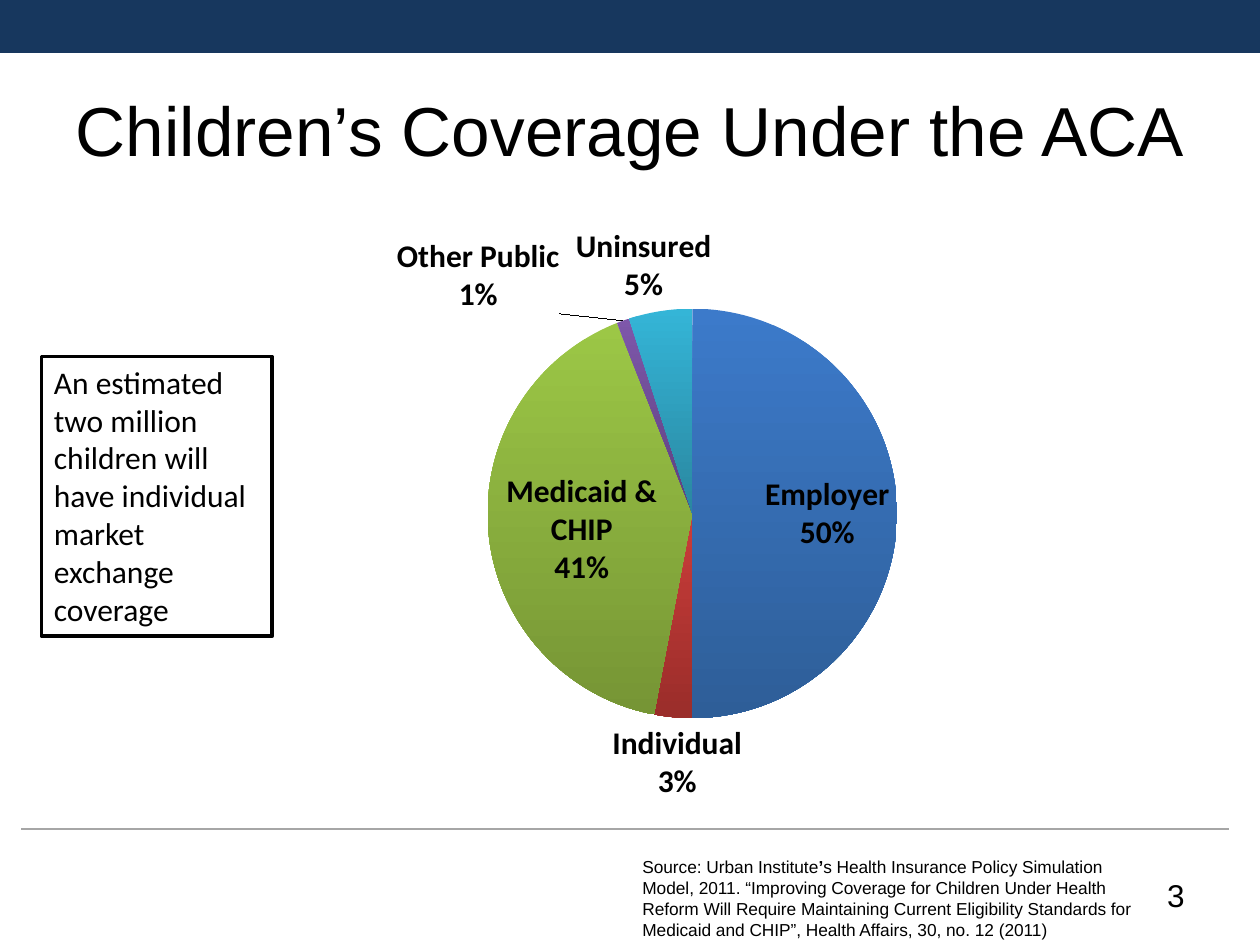
from lxml import etree
from pptx import Presentation
from pptx.chart.data import CategoryChartData
from pptx.dml.color import RGBColor
from pptx.enum.chart import XL_CHART_TYPE, XL_LABEL_POSITION as LabelPosition
from pptx.enum.shapes import MSO_CONNECTOR, MSO_SHAPE
from pptx.enum.text import MSO_ANCHOR, MSO_AUTO_SIZE, PP_ALIGN
from pptx.oxml import parse_xml
from pptx.oxml.ns import nsdecls, qn
from pptx.util import Inches, Pt

COLORS = {"navy": "17375E", "rule": "A6A6A6", "black": "000000", "white": "FFFFFF"}
COVERAGE = [
    ("Employer", 50, "3C7ACA", "2E5E98", LabelPosition.INSIDE_END),
    ("Individual", 3, "CB3D3A", "9A2D2A", LabelPosition.OUTSIDE_END),
    ("Medicaid & CHIP", 41, "9CC746", "769535", LabelPosition.CENTER),
    ("Other Public", 1, "7E57AA", "5D417E", LabelPosition.OUTSIDE_END),
    ("Uninsured", 5, "34B5D7", "2A87A0", LabelPosition.OUTSIDE_END),
]
LABEL_SHIFTS = {
    "Individual": (0.08, 0),
    "Medicaid & CHIP": (-0.01, 0.01),
    "Other Public": (-0.07, 0),
    "Uninsured": (0.06, 0),
}


def color(name):
    return RGBColor.from_string(COLORS[name])


def inches(box):
    return [Inches(length) for length in box]


def style_font(font, size, name="Arial", bold=False):
    font.name = name
    font.size = Pt(size)
    font.bold = bold
    font.color.rgb = color("black")


def write(text_frame, runs, size, name="Arial", align=PP_ALIGN.LEFT):
    text_frame.word_wrap = True
    paragraph = text_frame.paragraphs[0]
    paragraph.alignment = align
    for text, bold in runs:
        run = paragraph.add_run()
        run.text = text
        style_font(run.font, size, name, bold)


def add_frame(slide, bar_box, rule_box):
    bar = slide.shapes.add_shape(MSO_SHAPE.RECTANGLE, *inches(bar_box))
    bar.shadow.inherit = False
    bar.fill.solid()
    bar.fill.fore_color.rgb = color("navy")
    bar.line.fill.background()

    left, top, width, height = rule_box
    rule = slide.shapes.add_connector(
        MSO_CONNECTOR.STRAIGHT, *inches((left, top, left + width, top + height)))
    rule.line.color.rgb = color("rule")
    rule.line.width = Pt(0.75)
    etree.SubElement(rule._element.spPr, qn("a:effectLst"))


def add_title(slide, box):
    title = slide.shapes.title
    title.left, title.top, title.width, title.height = inches(box)
    frame = title.text_frame
    frame.auto_size = MSO_AUTO_SIZE.NONE
    frame.vertical_anchor = MSO_ANCHOR.MIDDLE
    frame.margin_left = frame.margin_right = Inches(0.05)
    write(frame, [("Children’s Coverage Under the ACA", False)], 39.6, align=PP_ALIGN.CENTER)


def add_footer(slide, source_box, number_box):
    source = slide.shapes.add_textbox(*inches(source_box))
    write(source.text_frame, [
        ("Source: Urban Institute", False),
        ("’", True),
        ("s Health Insurance Policy Simulation Model, 2011. “Improving Coverage for "
         "Children Under Health Reform Will Require Maintaining Current Eligibility "
         "Standards for Medicaid and CHIP”, Health Affairs, 30, no. 12 (2011)", False),
    ], 9.9)
    number = slide.shapes.add_textbox(*inches(number_box))
    write(number.text_frame, [("3", False)], 18, align=PP_ALIGN.RIGHT)


def layout_xml(x, y, size=None, target=""):
    extent = f'<c:w val="{size[0]}"/><c:h val="{size[1]}"/>' if size else ""
    modes = '<c:xMode val="edge"/><c:yMode val="edge"/>' if size else ""
    return parse_xml(
        f'<c:layout {nsdecls("c")}><c:manualLayout>{target}{modes}'
        f'<c:x val="{x}"/><c:y val="{y}"/>{extent}</c:manualLayout></c:layout>')


def show_category_and_percent(labels):
    for tag, value in (("showVal", "0"), ("showCatName", "1"), ("showPercent", "1")):
        labels.find(qn(f"c:{tag}")).set("val", value)
    separator = etree.Element(qn("c:separator"))
    separator.text = "\n"
    last_flag = labels.find(qn("c:showBubbleSize"))
    if last_flag is None:
        last_flag = labels.find(qn("c:showPercent"))
    last_flag.addnext(separator)


def add_coverage_chart(slide, box, pie_box):
    data = CategoryChartData()
    data.categories = [row[0] for row in COVERAGE]
    data.add_series("Series 1", [row[1] for row in COVERAGE])
    chart = slide.shapes.add_chart(XL_CHART_TYPE.PIE, *inches(box), data).chart
    chart.has_legend = False
    chart.has_title = False
    style_font(chart.font, 10, "Calibri")
    chart.plots[0].vary_by_categories = True

    series = chart.plots[0].series[0]
    style_font(series.data_labels.font, 18, "Calibri", True)
    for index, (_, _, top_color, bottom_color, position) in enumerate(COVERAGE):
        point = series.points[index]
        fill = point.format.fill
        fill.gradient()
        fill.gradient_angle = 270
        for stop, shade in zip(fill.gradient_stops, (top_color, bottom_color)):
            stop.color.rgb = RGBColor.from_string(shade)
        point.format.line.fill.background()
        style_font(point.data_label.font, 18, "Calibri", True)
        point.data_label.position = position

    labels = series.data_labels._element
    show_category_and_percent(labels)
    for label, row in zip(labels.findall(qn("c:dLbl")), COVERAGE):
        show_category_and_percent(label)
        if row[0] in LABEL_SHIFTS:
            label.find(qn("c:idx")).addnext(layout_xml(*LABEL_SHIFTS[row[0]]))

    left, top, width, height = box
    pie_left, pie_top, pie_width, pie_height = pie_box
    plot_area = chart._chartSpace.find(f".//{qn('c:plotArea')}")
    for old_layout in plot_area.findall(qn("c:layout")):
        plot_area.remove(old_layout)
    plot_area.insert(0, layout_xml(
        (pie_left - left) / width, (pie_top - top) / height,
        (pie_width / width, pie_height / height), '<c:layoutTarget val="inner"/>'))


def add_callout(slide, box):
    callout = slide.shapes.add_shape(MSO_SHAPE.RECTANGLE, *inches(box))
    callout.shadow.inherit = False
    callout.fill.solid()
    callout.fill.fore_color.rgb = color("white")
    callout.line.color.rgb = color("black")
    callout.line.width = Pt(2)
    callout.text_frame.auto_size = MSO_AUTO_SIZE.SHAPE_TO_FIT_TEXT
    callout.text_frame.vertical_anchor = MSO_ANCHOR.TOP
    write(callout.text_frame, [(
        "An estimated two million children will have individual market exchange coverage",
        False)], 18, "Calibri")


def main():
    presentation = Presentation()
    presentation.slide_width, presentation.slide_height = Inches(10), Inches(7.5)
    slide = presentation.slides.add_slide(presentation.slide_layouts[5])
    add_frame(slide, (0, 0, 10, 0.42), (0.17, 6.58, 9.58, 0))
    add_title(slide, (0.5, 0.5, 9, 1.05))
    add_footer(slide, (5, 6.75, 4.08, 0.67), (8.83, 6.9, 0.67, 0.4))
    add_coverage_chart(slide, (1.42, 1.67, 6.92, 4.83), (3.87, 2.45, 3.25, 3.25))
    add_callout(slide, (0.33, 2.83, 1.83, 2.22))
    presentation.save("out.pptx")


if __name__ == "__main__":
    main()
